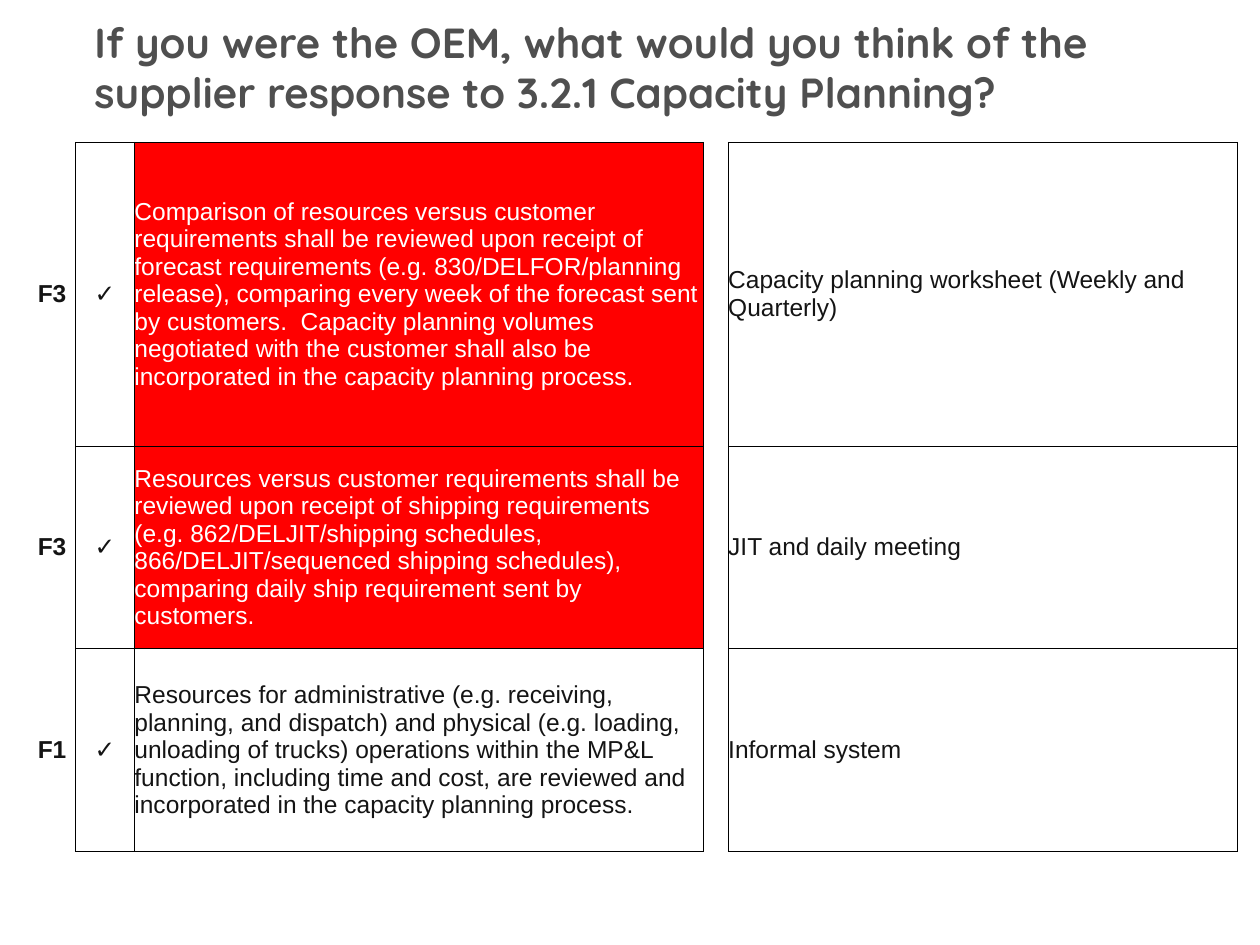
"""Build the capacity planning supplier response slide."""
from lxml import etree
from pptx import Presentation
from pptx.dml.color import RGBColor
from pptx.enum import text
from pptx.oxml import ns
from pptx.util import Cm, Pt

COLORS = {"title": "4F4F4F", "ink": "141414", "white": "FFFFFF",
          "alert": "FF0000", "border": "000000"}
TITLE = ("If you were the OEM, what would you think of the supplier "
         "response to 3.2.1 Capacity Planning?")
COLUMN_WIDTHS = [0.94, 1.19, 11.46, 0.51, 10.26]
ROW_HEIGHTS = [6.12, 4.09, 4.09]
COLUMN_EDGES = ["R", "LRTB", "LRTB", "LR", "LRTB"]
CENTERED_COLUMNS = (0, 1)
REQUIREMENT_COLUMN = 2
ALERT_ROWS = (0, 1)
ROWS = [
    ("F3", "✓",
     "Comparison of resources versus customer requirements shall be reviewed "
     "upon receipt of forecast requirements (e.g. 830/DELFOR/planning release), "
     "comparing every week of the forecast sent by customers.  Capacity planning "
     "volumes negotiated with the customer shall also be incorporated in the "
     "capacity planning process.",
     "", "Capacity planning worksheet (Weekly and Quarterly)"),
    ("F3", "✓",
     "Resources versus customer requirements shall be reviewed upon receipt of "
     "shipping requirements (e.g. 862/DELJIT/shipping schedules, "
     "866/DELJIT/sequenced shipping schedules), comparing daily ship requirement "
     "sent by customers.",
     "", "JIT and daily meeting"),
    ("F1", "✓",
     "Resources for administrative (e.g. receiving, planning, and dispatch) and "
     "physical (e.g. loading, unloading of trucks) operations within the MP&L "
     "function, including time and cost, are reviewed and incorporated in the "
     "capacity planning process.",
     "", "Informal system"),
]


def color(name):
    """Return the named colour."""
    return RGBColor.from_string(COLORS[name])


def format_font(font, name, size, color_name, bold):
    """Apply typeface, size, colour and weight."""
    font.name, font.size, font.bold = name, Pt(size), bold
    font.color.rgb = color(color_name)


def set_borders(cell, edges):
    """Draw the listed cell edges and hide the others."""
    properties = cell._tc.get_or_add_tcPr()
    for index, edge in enumerate("LRTB"):
        line = etree.Element(ns.qn(f"a:ln{edge}"), w=str(Pt(0.5)))
        if edge in edges:
            fill = etree.SubElement(line, ns.qn("a:solidFill"))
            etree.SubElement(fill, ns.qn("a:srgbClr"), val=COLORS["border"])
        else:
            etree.SubElement(line, ns.qn("a:noFill"))
        properties.insert(index, line)


def format_cell(cell, content, fill, ink, centered, edges):
    """Fill one table cell with text, background and borders."""
    cell.margin_left = cell.margin_right = cell.margin_top = cell.margin_bottom = 0
    cell.vertical_anchor = text.MSO_ANCHOR.MIDDLE
    cell.fill.solid()
    cell.fill.fore_color.rgb = color(fill)
    set_borders(cell, edges)
    paragraph = cell.text_frame.paragraphs[0]
    paragraph.alignment = text.PP_ALIGN.CENTER if centered else text.PP_ALIGN.LEFT
    if content:
        paragraph.text = content
        format_font(paragraph.runs[0].font, "Arial", 14, ink, centered)


def add_response_table(slide):
    """Add the requirement and response table."""
    table = slide.shapes.add_table(
        len(ROWS), len(COLUMN_WIDTHS), Cm(0.58), Cm(2.87),
        Cm(sum(COLUMN_WIDTHS)), Cm(sum(ROW_HEIGHTS))).table
    table.first_row = table.horz_banding = False
    for column, width in zip(table.columns, COLUMN_WIDTHS):
        column.width = Cm(width)
    for row, height in zip(table.rows, ROW_HEIGHTS):
        row.height = Cm(height)
    for row_index, contents in enumerate(ROWS):
        for column_index, content in enumerate(contents):
            alert = column_index == REQUIREMENT_COLUMN and row_index in ALERT_ROWS
            format_cell(table.cell(row_index, column_index), content,
                        "alert" if alert else "white", "white" if alert else "ink",
                        column_index in CENTERED_COLUMNS, COLUMN_EDGES[column_index])


def format_title(title):
    """Place and style the title placeholder."""
    title.left, title.top, title.width, title.height = (
        Cm(1.65), Cm(0.36), Cm(22.86), Cm(1.98))
    frame = title.text_frame
    frame.text = TITLE
    frame.word_wrap = True
    frame.auto_size = text.MSO_AUTO_SIZE.NONE
    frame.vertical_anchor = text.MSO_ANCHOR.MIDDLE
    paragraph = frame.paragraphs[0]
    paragraph.alignment = text.PP_ALIGN.LEFT
    format_font(paragraph.runs[0].font, "Quicksand", 24, "title", True)


def main():
    """Build and save the presentation."""
    presentation = Presentation()
    presentation.slide_width, presentation.slide_height = Cm(25.4), Cm(19.05)
    slide = presentation.slides.add_slide(presentation.slide_layouts[5])
    format_title(slide.shapes.title)
    add_response_table(slide)
    presentation.save("out.pptx")


if __name__ == "__main__":
    main()
